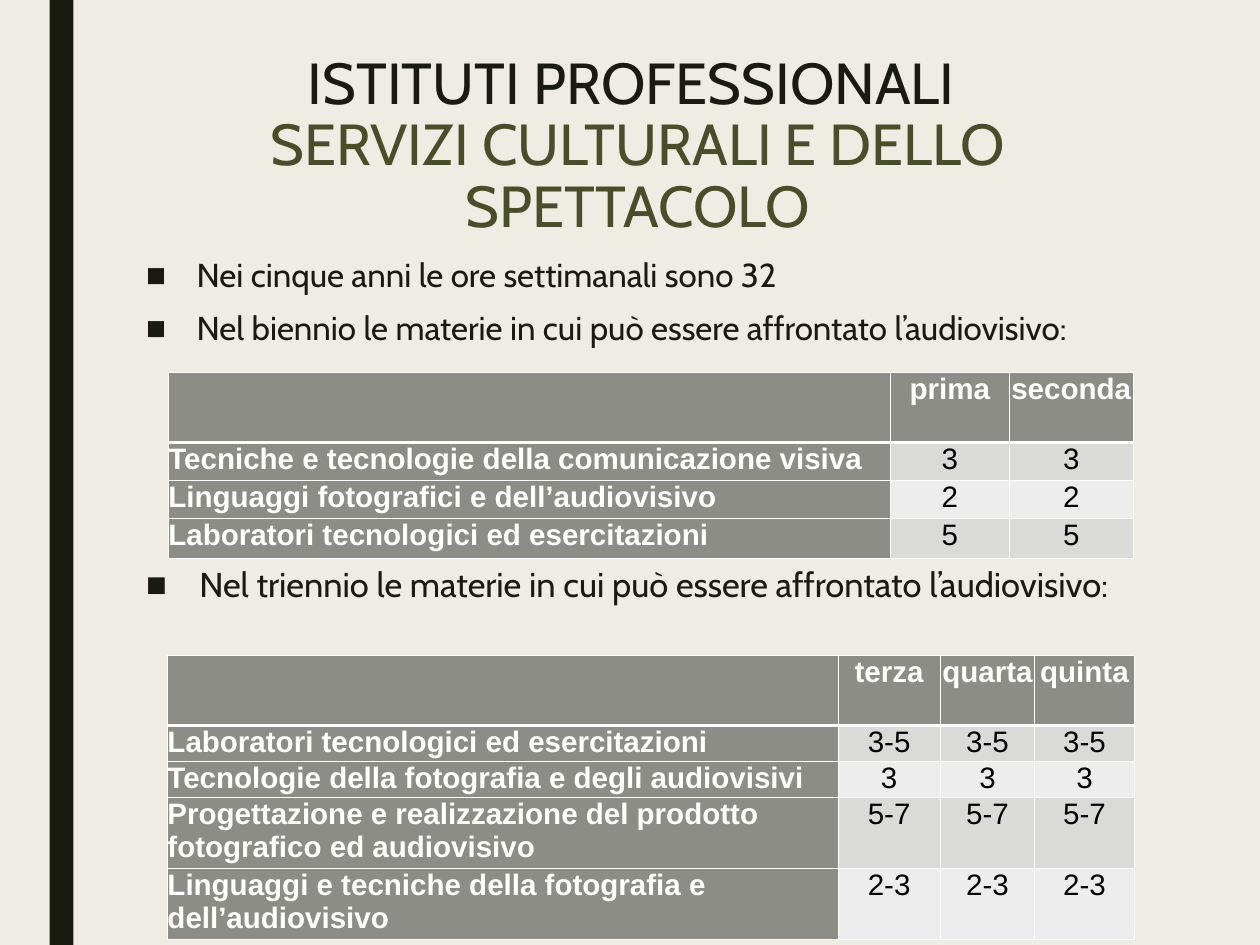
"""Build a slide on audiovisual teaching hours in Italian vocational institutes."""
from lxml.etree import SubElement
from pptx import Presentation
from pptx.dml.color import RGBColor
from pptx.enum.shapes import MSO_SHAPE
from pptx.enum.text import MSO_ANCHOR, PP_ALIGN
from pptx.oxml.ns import qn
from pptx.util import Inches, Pt

INK = RGBColor(0x19, 0x1B, 0x0E)
OLIVE = RGBColor(0x48, 0x4E, 0x29)
CREAM = RGBColor(0xEF, 0xED, 0xE3)
GREY = RGBColor(0x8C, 0x8D, 0x86)
BANDS = (RGBColor(0xDA, 0xDA, 0xD8), RGBColor(0xED, 0xED, 0xED))
WHITE = RGBColor(0xFF, 0xFF, 0xFF)
BLACK = RGBColor(0, 0, 0)

TITLE = [
    ("ISTITUTI PROFESSIONALI ", INK),
    ("SERVIZI CULTURALI E DELLO SPETTACOLO", OLIVE),
]
BULLETS = [
    dict(top=2.86, height=1.31, size=26.9, indent=0.57, lines=[
        "Nei cinque anni le ore settimanali sono 32",
        "Nel biennio le materie in cui può essere affrontato l’audiovisivo:",
    ]),
    dict(top=6.35, height=1.02, size=28, indent=0.6, lines=[
        "Nel triennio le materie in cui può essere affrontato l’audiovisivo:",
    ]),
]
TABLES = [
    dict(left=1.9, top=4.21, cols=[8.15, 1.34, 1.4], rows=[0.79, 0.43, 0.43, 0.45], cells=[
        ("", "prima", "seconda"),
        ("Tecniche e tecnologie della comunicazione visiva", "3", "3"),
        ("Linguaggi fotografici e dell’audiovisivo", "2", "2"),
        ("Laboratori tecnologici ed esercitazioni", "5", "5"),
    ]),
    dict(left=1.89, top=7.4, cols=[7.57, 1.15, 1.07, 1.12], rows=[0.79, 0.41, 0.41, 0.78, 0.78], cells=[
        ("", "terza", "quarta", "quinta"),
        ("Laboratori tecnologici ed esercitazioni", "3-5", "3-5", "3-5"),
        ("Tecnologie della fotografia e degli audiovisivi", "3", "3", "3"),
        ("Progettazione e realizzazione del prodotto fotografico ed audiovisivo", "5-7", "5-7", "5-7"),
        ("Linguaggi e tecniche della fotografia e dell’audiovisivo", "2-3", "2-3", "2-3"),
    ]),
]
TEXT_LEFT, TEXT_WIDTH = 1.6, 11.2


def add_run(p, text, font, size, color, bold=False):
    r = p.add_run()
    r.text = text
    r.font.name, r.font.size, r.font.bold = font, Pt(size), bold
    r.font.color.rgb = color


def add_text_frame(s, top, height):
    tf = s.shapes.add_textbox(Inches(TEXT_LEFT), Inches(top), Inches(TEXT_WIDTH), Inches(height)).text_frame
    tf.word_wrap = True
    tf.margin_left = tf.margin_right = tf.margin_top = tf.margin_bottom = Inches(0.05)
    return tf


def next_paragraph(tf, i):
    return tf.add_paragraph() if i else tf.paragraphs[0]


def add_title(s):
    tf = add_text_frame(s, 0.51, 2.31)
    tf.vertical_anchor = MSO_ANCHOR.MIDDLE
    for i, (text, color) in enumerate(TITLE):
        p = next_paragraph(tf, i)
        p.alignment, p.line_spacing = PP_ALIGN.CENTER, 0.89
        add_run(p, text, "Cabin", 47, color)


def add_bullets(s, top, height, size, indent, lines):
    tf = add_text_frame(s, top, height)
    for i, text in enumerate(lines):
        p = next_paragraph(tf, i)
        p.line_spacing = 0.94
        p.space_before = Pt(13 if i else 0)
        pPr = p._p.get_or_add_pPr()
        pPr.set("marL", str(Inches(indent)))
        pPr.set("indent", str(-Inches(indent)))
        SubElement(SubElement(pPr, qn("a:buClr")), qn("a:srgbClr"), val=str(INK))
        SubElement(pPr, qn("a:buFont"), typeface="Arial")
        SubElement(pPr, qn("a:buChar"), char="■")
        add_run(p, text, "Cabin", size, INK)


def set_borders(cell, bottom, top):
    tcPr = cell._tc.get_or_add_tcPr()
    for side, width in (("L", 1), ("R", 1), ("T", top), ("B", bottom)):
        ln = SubElement(tcPr, qn(f"a:ln{side}"), w=str(Pt(width)))
        SubElement(SubElement(ln, qn("a:solidFill")), qn("a:srgbClr"), val=str(WHITE))


def add_hours_table(s, left, top, cols, rows, cells):
    table = s.shapes.add_table(len(rows), len(cols), Inches(left), Inches(top),
                               Inches(sum(cols)), Inches(sum(rows))).table
    for column, width in zip(table.columns, cols):
        column.width = Inches(width)
    for i, (row, height) in enumerate(zip(table.rows, rows)):
        row.height = Inches(height)
        for j, text in enumerate(cells[i]):
            cell = row.cells[j]
            heading = i == 0 or j == 0
            cell.margin_left = cell.margin_right = cell.margin_top = cell.margin_bottom = 0
            set_borders(cell, bottom=3 if i == 0 else 1, top=3 if i == 1 else 1)
            cell.fill.solid()
            cell.fill.fore_color.rgb = GREY if heading else BANDS[(i - 1) % 2]
            if text:
                p = cell.text_frame.paragraphs[0]
                p.alignment = PP_ALIGN.CENTER if j else PP_ALIGN.LEFT
                add_run(p, text, "Arial", 24, WHITE if heading else BLACK, heading)


def main():
    prs = Presentation()
    prs.slide_width, prs.slide_height = Inches(14.22), Inches(10.67)
    s = prs.slides.add_slide(prs.slide_layouts[6])
    s.background.fill.solid()
    s.background.fill.fore_color.rgb = CREAM

    sp = s.shapes.add_shape(MSO_SHAPE.RECTANGLE, Inches(0.56), 0, Inches(0.27), prs.slide_height)
    sp.shadow.inherit = False
    sp.fill.solid()
    sp.fill.fore_color.rgb = INK
    sp.line.fill.background()

    add_title(s)
    for bullets, table in zip(BULLETS, TABLES):
        add_bullets(s, **bullets)
        add_hours_table(s, **table)
    prs.save("out.pptx")


if __name__ == "__main__":
    main()
